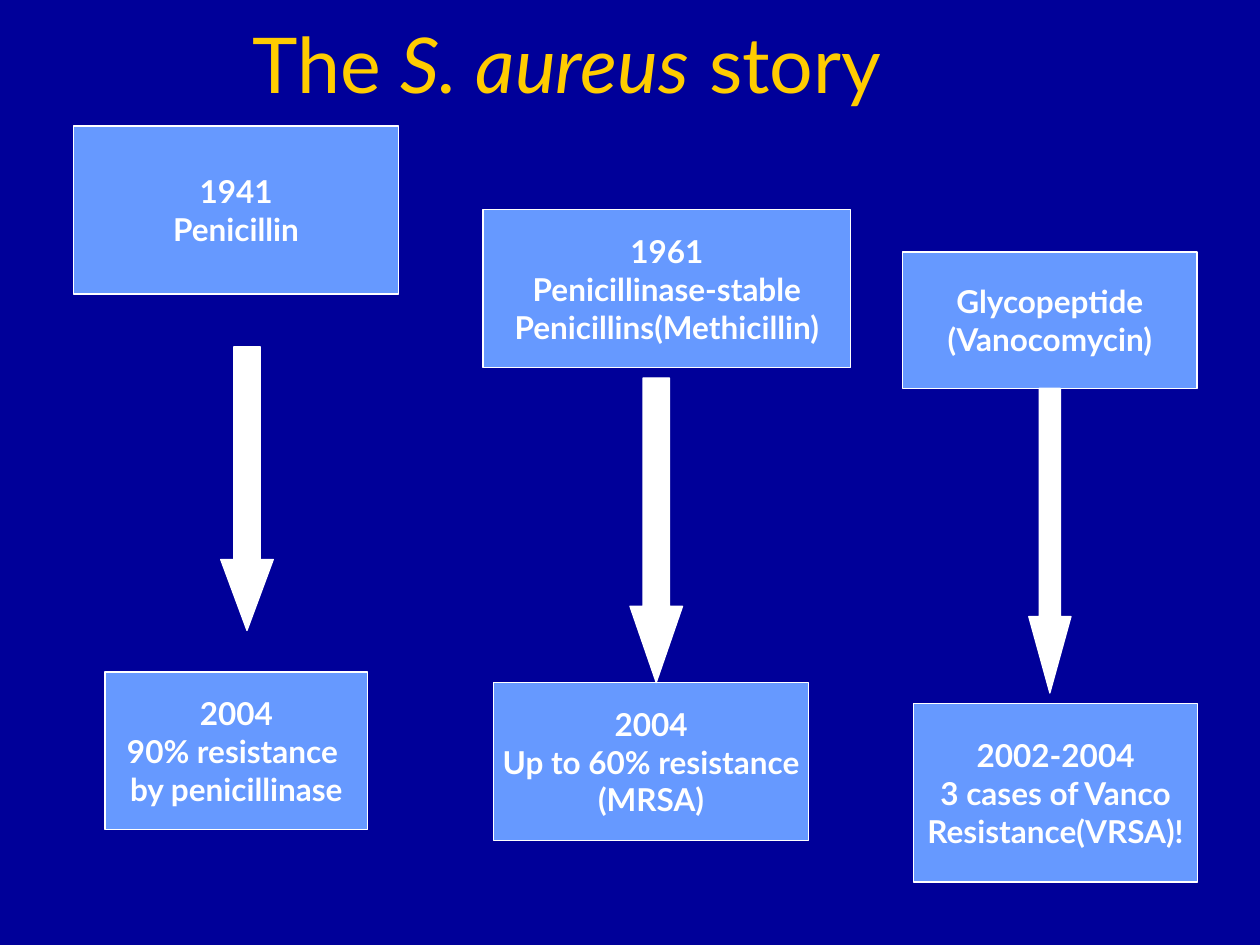
"""Build a slide on how S. aureus became resistant to successive antibiotics."""
from pptx import Presentation
from pptx.dml.color import RGBColor
from pptx.enum.shapes import MSO_SHAPE
from pptx.enum.text import MSO_ANCHOR, PP_ALIGN
from pptx.util import Cm, Pt

COLORS = {"background": "000099", "title": "FFCC00", "box": "6699FF", "white": "FFFFFF"}
FONT = "Lato"

BOXES = [
    ((1.48, 2.54, 6.56, 3.39), ["1941", "Penicillin"]),
    ((9.74, 4.23, 7.41, 3.18),
     ["1961", "Penicillinase-stable", "Penicillins(Methicillin)"]),
    ((18.2, 5.08, 5.93, 2.75), ["Glycopeptide", "(Vanocomycin)"]),
    ((2.12, 13.55, 5.29, 3.18), ["2004", "90% resistance ", "by penicillinase"]),
    ((9.95, 13.76, 6.35, 3.18), ["2004", "Up to 60% resistance", "(MRSA)"]),
    ((18.42, 14.18, 5.72, 3.6),
     ["2002-2004", "3 cases of Vanco", "Resistance(VRSA)!"]),
]
ARROWS = [
    ((4.45, 6.99, 1.06, 5.72), 1.35),
    ((12.7, 7.62, 1.06, 6.14), 1.45),
    ((20.74, 7.83, 0.85, 6.14), 1.81),
]


def rgb(name):
    return RGBColor.from_string(COLORS[name])


def add_run(p, text, size, color, bold=False, italic=False):
    r = p.add_run()
    r.text = text
    r.font.name = FONT
    r.font.size = Pt(size)
    r.font.bold = bold
    r.font.italic = italic
    r.font.color.rgb = rgb(color)


def set_title(s, parts):
    sp = s.shapes.title
    sp.left, sp.top, sp.width, sp.height = Cm(0), Cm(0), Cm(22.86), Cm(2.54)
    tf = sp.text_frame
    tf.vertical_anchor = MSO_ANCHOR.MIDDLE
    p = tf.paragraphs[0]
    p.alignment = PP_ALIGN.CENTER
    for text, italic in parts:
        add_run(p, text, 44, "title", italic=italic)


def add_shape(s, kind, place, fill):
    sp = s.shapes.add_shape(kind, *(Cm(v) for v in place))
    sp.shadow.inherit = False
    sp.fill.solid()
    sp.fill.fore_color.rgb = rgb(fill)
    sp.line.color.rgb = rgb("white")
    sp.line.width = Pt(0.75)
    return sp


def add_box(s, place, lines):
    tf = add_shape(s, MSO_SHAPE.RECTANGLE, place, "box").text_frame
    tf.word_wrap = False
    tf.vertical_anchor = MSO_ANCHOR.MIDDLE
    for i, line in enumerate(lines):
        p = tf.add_paragraph() if i else tf.paragraphs[0]
        p.alignment = PP_ALIGN.CENTER
        add_run(p, line, 18, "white", bold=True)


def add_arrow(s, place, head):
    sp = add_shape(s, MSO_SHAPE.DOWN_ARROW, place, "white")
    sp.adjustments[0] = 0.5
    sp.adjustments[1] = head


def main():
    prs = Presentation()
    prs.slide_width, prs.slide_height = Cm(25.4), Cm(19.05)
    s = prs.slides.add_slide(prs.slide_layouts[5])
    s.background.fill.solid()
    s.background.fill.fore_color.rgb = rgb("background")
    set_title(s, [("The ", False), ("S. aureus", True), (" story", False)])
    for place, lines in BOXES:
        add_box(s, place, lines)
    for place, head in ARROWS:
        add_arrow(s, place, head)
    prs.save("out.pptx")


if __name__ == "__main__":
    main()
